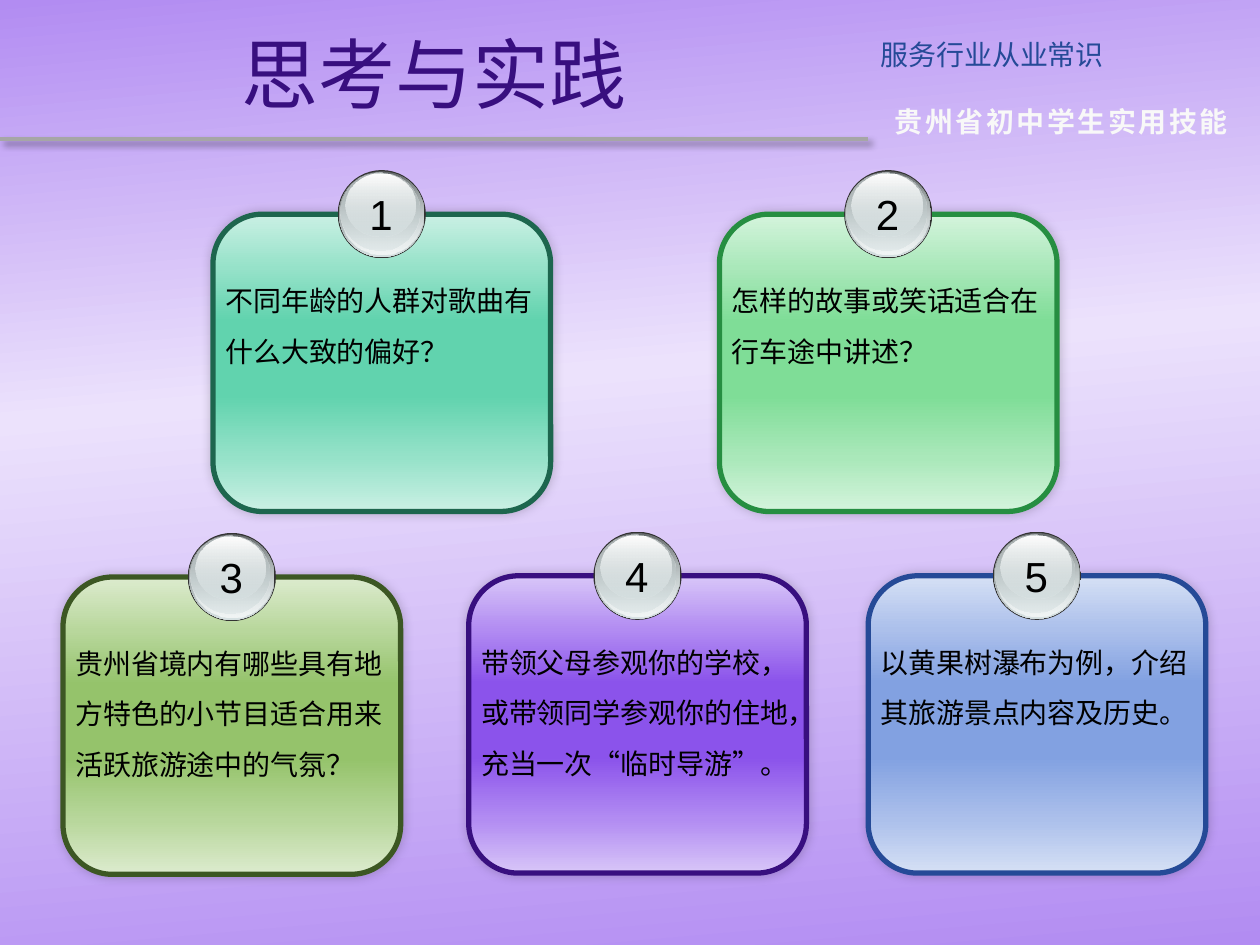
from lxml import etree
from pptx import Presentation
from pptx.dml.color import RGBColor
from pptx.enum.shapes import MSO_CONNECTOR, MSO_SHAPE
from pptx.enum.text import MSO_ANCHOR, MSO_AUTO_SIZE, PP_ALIGN
from pptx.oxml.ns import qn
from pptx.util import Inches, Pt

ROUNDED, OVAL = MSO_SHAPE.ROUNDED_RECTANGLE, MSO_SHAPE.OVAL
STRAIGHT = MSO_CONNECTOR.STRAIGHT
LEFT, CENTER, JUSTIFY = PP_ALIGN.LEFT, PP_ALIGN.CENTER, PP_ALIGN.JUSTIFY
TOP, MIDDLE = MSO_ANCHOR.TOP, MSO_ANCHOR.MIDDLE
FIT_SHAPE, NO_FIT = MSO_AUTO_SIZE.SHAPE_TO_FIT_TEXT, MSO_AUTO_SIZE.NONE

CJK, LATIN = "Noto Sans CJK SC", "Arial"
COLORS = {
    "edge": "B28CF2", "glow": "ECE2FC", "title": "380F7F", "course": "254A97",
    "series": "F8F8F8", "rule": "A6A6A6", "ink": "000000", "rim": "333333",
    "steel": "636869", "silver": "D6E1E2", "pale": "F1F5F5",
    "gray": "AAB2B3", "shine": "FFFFFF",
}
# Card themes: outer, middle and inner gradient colour, then border
THEMES = {
    "teal": ("CAF0E4", "96E2C9", "61D3AE", "1D664E"),
    "green": ("D4F4DC", "AAE8BA", "7FDD97", "268E41"),
    "olive": ("DCEBCE", "B8D79C", "95C36B", "3C5723"),
    "purple": ("D8C6F8", "B28CF2", "8B53EB", "380F7F"),
    "blue": ("D5E0F5", "ACC0EB", "82A1E1", "254A97"),
}
CARD_W, CARD_H = 2.68, 2.36
# Left, top, theme, text width, line count, question
CARDS = [
    (1.69, 1.7, "teal", 2.68, 2, "不同年龄的人群对歌曲有什么大致的偏好？"),
    (5.71, 1.7, "green", 2.68, 2, "怎样的故事或笑话适合在行车途中讲述？"),
    (0.5, 4.58, "olive", 2.68, 3,
     "贵州省境内有哪些具有地方特色的小节目适合用来活跃旅游途中的气氛？"),
    (3.72, 4.57, "purple", 2.75, 3,
     "带领父母参观你的学校，或带领同学参观你的住地，充当一次“临时导游”。"),
    (6.89, 4.57, "blue", 2.8, 2, "以黄果树瀑布为例，介绍其旅游景点内容及历史。"),
]
# Badge layers: x and y offset, width, height, start and end (colour, opacity)
BADGE_LAYERS = [
    (0, 0, 0.7, 0.7, ("rim", 100), ("rim", 100)),
    (0.01, 0.01, 0.68, 0.68, ("steel", 100), ("silver", 100)),
    (0.02, 0.01, 0.66, 0.66, ("silver", 0), ("pale", 100)),
    (0.02, 0.02, 0.63, 0.62, ("gray", 100), ("silver", 48)),
    (0.06, 0.03, 0.56, 0.5, ("shine", 100), ("silver", 38)),
]


def add_color(parent, color, opacity):
    node = etree.SubElement(parent, qn("a:srgbClr"), val=color)
    if opacity < 100:
        etree.SubElement(node, qn("a:alpha"), val=str(opacity * 1000))


def set_gradient(fill, owner, stops, angle=90):
    """Stops are (position, colour, opacity); the angle runs clockwise."""
    fill.gradient()
    gradient = owner.find(".//" + qn("a:gradFill"))
    for child in list(gradient):
        gradient.remove(child)
    stop_list = etree.SubElement(gradient, qn("a:gsLst"))
    for position, color, opacity in stops:
        stop = etree.SubElement(stop_list, qn("a:gs"), pos=str(position * 1000))
        add_color(stop, color, opacity)
    etree.SubElement(gradient, qn("a:lin"), ang=str(angle * 60000), scaled="0")


def add_shadow(shape, opacity, blur, distance, angle):
    properties = shape._element.spPr
    effects = properties.find(qn("a:effectLst"))
    if effects is None:
        effects = etree.SubElement(properties, qn("a:effectLst"))
    shadow = etree.SubElement(
        effects, qn("a:outerShdw"), blurRad=str(Pt(blur)), dist=str(Pt(distance)),
        dir=str(angle * 60000), algn="ctr", rotWithShape="0")
    add_color(shadow, COLORS["ink"], opacity)


def add_text(shapes, box, text, size, color, font=CJK, align=LEFT, anchor=TOP,
             wrap=True, fit=FIT_SHAPE, bold=False, line_spacing=None, tracking=0):
    frame = shapes.add_textbox(*map(Inches, box)).text_frame
    frame.word_wrap, frame.auto_size, frame.vertical_anchor = wrap, fit, anchor
    paragraph = frame.paragraphs[0]
    paragraph.text, paragraph.alignment = text, align
    paragraph.line_spacing = line_spacing
    style = paragraph.font
    style.size, style.bold, style.name = Pt(size), bold, font
    style.color.rgb = RGBColor.from_string(COLORS[color])
    etree.SubElement(style._element, qn("a:ea"), typeface=font)
    if tracking:
        style._element.set("spc", str(int(tracking * 100)))


def add_gradient_shape(shapes, kind, box, stops):
    shape = shapes.add_shape(kind, *map(Inches, box))
    shape.shadow.inherit = False
    set_gradient(shape.fill, shape._element, stops)
    shape.line.fill.background()
    return shape


def add_badge(shapes, left, top, number):
    for dx, dy, width, height, start, end in BADGE_LAYERS:
        stops = [(position, COLORS[name], opacity)
                 for position, (name, opacity) in ((0, start), (100, end))]
        add_gradient_shape(shapes, OVAL, (left + dx, top + dy, width, height), stops)
    add_text(shapes, (left + 0.15, top + 0.1, 0.39, 0.5), str(number), 24, "ink",
             font=LATIN, align=CENTER, wrap=False)


def add_card(slide, number, left, top, theme, text_width, lines, question):
    shapes = slide.shapes.add_group_shape().shapes
    outer, middle, inner, border = THEMES[theme]
    stops = [(position, color, 100) for position, color in zip(
        (0, 18, 36, 61, 82, 100), (outer, middle, inner, inner, middle, outer))]
    panel = add_gradient_shape(shapes, ROUNDED, (left, top, CARD_W, CARD_H), stops)
    panel.line.color.rgb = RGBColor.from_string(border)
    panel.line.width = Pt(3)
    add_shadow(panel, 20, 6, 0, 315)
    add_badge(shapes, left + (CARD_W - 0.7) / 2, top - 0.35, number)
    add_text(shapes, (left, top + 0.37, text_width, 0.11 + 0.4 * lines), question,
             16, "ink", line_spacing=1.5)


def add_header(slide):
    shapes = slide.shapes
    add_text(shapes, (6.97, 0.78, 2.91, 0.37), "贵州省初中学生实用技能", 16, "series",
             align=CENTER, bold=True, tracking=1.5)
    add_text(shapes, (6.89, 0.25, 3.11, 0.37), "服务行业从业常识", 16, "course",
             align=JUSTIFY)
    add_text(shapes, (0, 0.07, 6.89, 1.02), "思考与实践", 44, "title",
             align=CENTER, anchor=MIDDLE, fit=NO_FIT)
    rule = shapes.add_connector(STRAIGHT, 0, Inches(1.1), Inches(6.89), Inches(1.1))
    rule.line.color.rgb = RGBColor.from_string(COLORS["rule"])
    rule.line.width = Pt(2.25)
    add_shadow(rule, 40, 4, 3, 45)


def main():
    prs = Presentation()
    prs.slide_width, prs.slide_height = Inches(10), Inches(7.5)
    slide = prs.slides.add_slide(prs.slide_layouts[6])

    # Background
    edge, glow = COLORS["edge"], COLORS["glow"]
    set_gradient(slide.background.fill, slide._element,
                 [(0, edge, 100), (40, glow, 100), (100, edge, 100)], angle=85)

    # Title and course names
    add_header(slide)

    # Numbered questions
    for number, card in enumerate(CARDS, start=1):
        add_card(slide, number, *card)

    prs.save("out.pptx")


if __name__ == "__main__":
    main()
